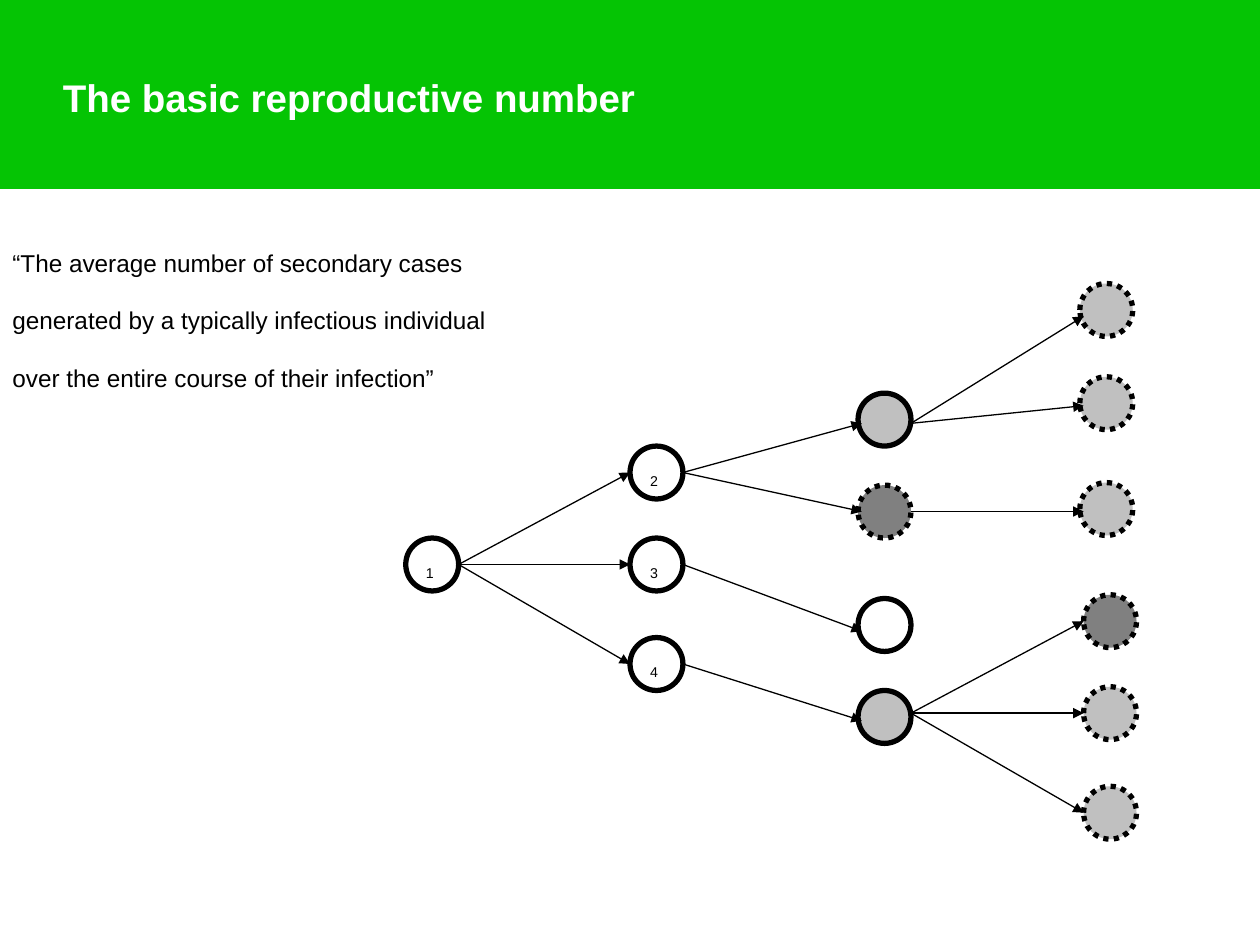
import pptx
import pptx.util
import pptx.dml.color
import pptx.enum.dml
import pptx.enum.shapes
import pptx.enum.text
import pptx.oxml.ns
import lxml.etree

Pt = pptx.util.Pt
RGB = pptx.dml.color.RGBColor.from_string
SHAPE = pptx.enum.shapes.MSO_SHAPE
ANCHOR = pptx.enum.text.MSO_ANCHOR
qn = pptx.oxml.ns.qn
COLORS = {"band": "05C404", "title": "FFFFFF", "ink": "000000",
          "light": "C0C0C0", "dark": "808080"}

prs = pptx.Presentation()
prs.slide_width = pptx.util.Inches(10)
prs.slide_height = pptx.util.Inches(7.5)
s = prs.slides.add_slide(prs.slide_layouts[6])


def pct(*values):
    """Lengths as percent of the slide width."""
    return [int(prs.slide_width * v / 100) for v in values]


def add_text(p, text, size, color, bold=False):
    r = p.add_run()
    r.text = text
    r.font.name = "Arial"
    r.font.size = Pt(size)
    r.font.bold = bold
    r.font.color.rgb = RGB(COLORS[color])
    return r


# Header band
band = s.shapes.add_shape(SHAPE.RECTANGLE, *pct(0, 0, 100, 15))
band.shadow.inherit = False
band.fill.solid()
band.fill.fore_color.rgb = RGB(COLORS["band"])
band.line.fill.background()

# Title
tf = s.shapes.add_textbox(*pct(5, 0, 71.4, 15.1)).text_frame
tf.word_wrap = True
tf.vertical_anchor = ANCHOR.MIDDLE
tf.margin_left = tf.margin_right = tf.margin_top = tf.margin_bottom = 0
p = tf.paragraphs[0]
p.line_spacing = 1.1
add_text(p, "The basic reproductive number", 22, "title", bold=True)

# Definition
tf = s.shapes.add_textbox(*pct(0, 16.9, 40.6, 24.2)).text_frame
tf.word_wrap = True
p = tf.paragraphs[0]
p.line_spacing = Pt(33)
add_text(p, "“The average number of secondary cases generated by a typically "
            "infectious individual over the entire course of their infection”",
         13.9, "ink")

# Cases: left, top, fill, dotted outline, label
SIZE = 4.2
CASES = [
    (32.2, 42.7, None, False, "1"),
    (50, 35.4, None, False, "2"),
    (50, 42.7, None, False, "3"),
    (50, 50.6, None, False, "4"),
    (68.1, 31.2, "light", False, ""),
    (68.1, 38.5, "dark", True, ""),
    (68.1, 47.5, None, False, ""),
    (68.1, 54.8, "light", False, ""),
    (85.7, 22.5, "light", True, ""),
    (85.7, 29.9, "light", True, ""),
    (85.7, 38.3, "light", True, ""),
    (86, 47.2, "dark", True, ""),
    (86, 54.5, "light", True, ""),
    (86, 62.4, "light", True, ""),
]
for left, top, fill, dotted, label in CASES:
    sp = s.shapes.add_shape(SHAPE.OVAL, *pct(left, top, SIZE, SIZE))
    sp.shadow.inherit = False
    if fill:
        sp.fill.solid()
        sp.fill.fore_color.rgb = RGB(COLORS[fill])
    else:
        sp.fill.background()
    sp.line.color.rgb = RGB(COLORS["ink"])
    sp.line.width = Pt(3)
    if dotted:
        sp.line.dash_style = pptx.enum.dml.MSO_LINE.ROUND_DOT
    if label:
        tf = sp.text_frame
        tf.word_wrap = False
        tf.vertical_anchor = ANCHOR.MIDDLE
        p = tf.paragraphs[0]
        p.alignment = pptx.enum.text.PP_ALIGN.LEFT
        r = add_text(p, label, 14, "ink")
        r.font._element.set("baseline", "-25000")

# Transmissions: start and end columns, then start row and its end rows
TRANSMISSIONS = [
    (36.4, 50, {44.8: [37.5, 44.8, 52.7]}),
    (54.2, 68.4, {37.5: [33.6, 40.6], 44.8: [50.1], 52.7: [57.2]}),
    (72.3, 86, {33.6: [25.1, 32.2], 40.6: [40.6],
                56.6: [49.3, 56.6, 64.5]}),
]
for x1, x2, spread in TRANSMISSIONS:
    for y1, ends in spread.items():
        for y2 in ends:
            c = s.shapes.add_connector(
                pptx.enum.shapes.MSO_CONNECTOR.STRAIGHT, *pct(x1, y1, x2, y2))
            c.line.color.rgb = RGB(COLORS["ink"])
            c.line.width = Pt(0.75)
            lxml.etree.SubElement(c.line._get_or_add_ln(), qn("a:tailEnd"),
                                  type="triangle")
            lxml.etree.SubElement(c._element.spPr, qn("a:effectLst"))

prs.save("out.pptx")
